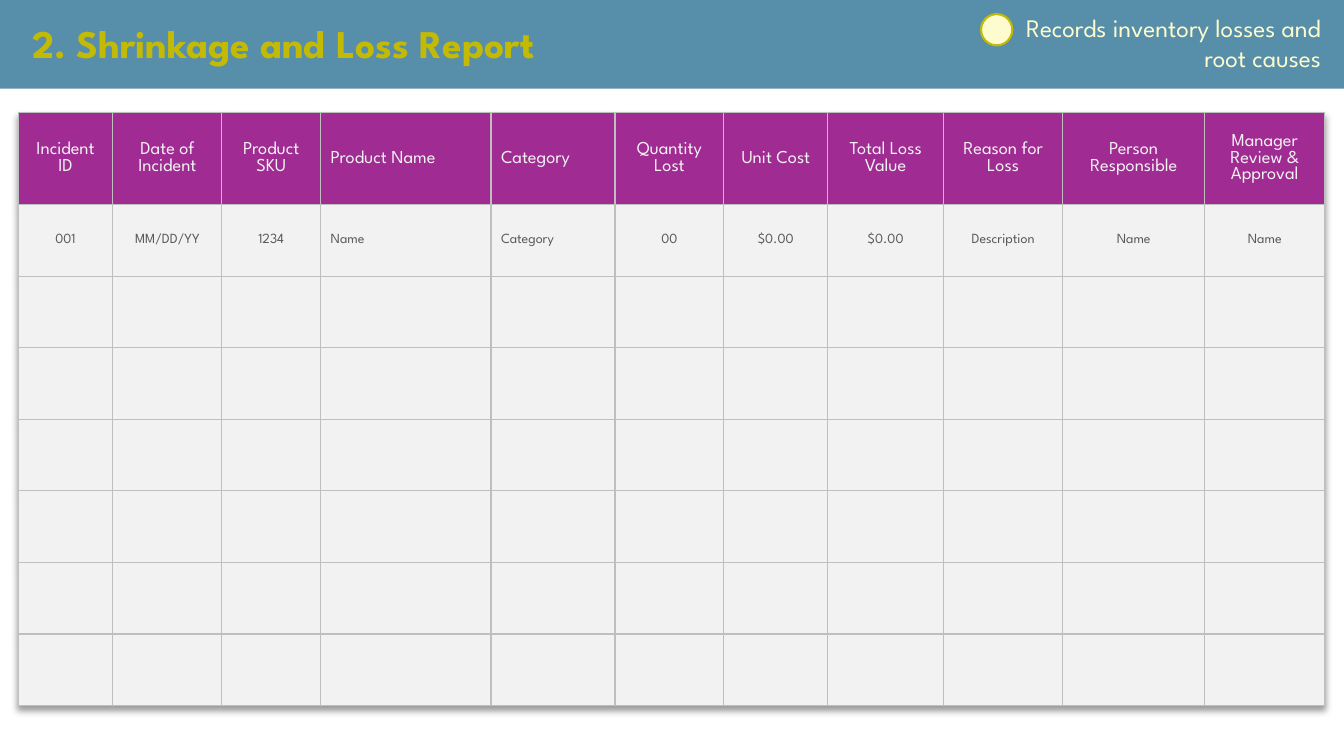
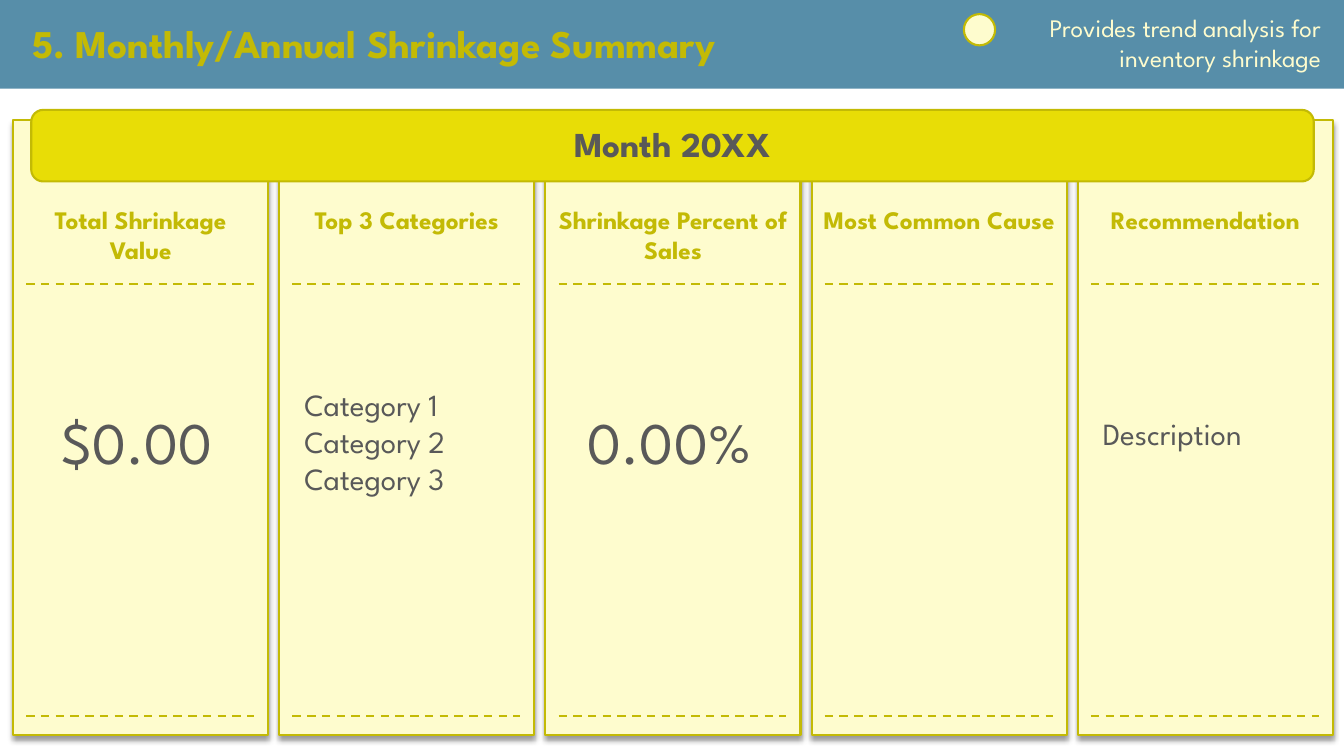
from dataclasses import dataclass

from lxml import etree
from pptx import Presentation
from pptx.dml.color import RGBColor
from pptx.enum.dml import MSO_LINE
from pptx.enum.shapes import MSO_CONNECTOR, MSO_SHAPE
from pptx.enum.text import MSO_ANCHOR, MSO_AUTO_SIZE, PP_ALIGN
from pptx.oxml.ns import qn
from pptx.util import Inches, Pt

RECTANGLE, OVAL = MSO_SHAPE.RECTANGLE, MSO_SHAPE.OVAL
ROUNDED = MSO_SHAPE.ROUNDED_RECTANGLE
STRAIGHT, DASH = MSO_CONNECTOR.STRAIGHT, MSO_LINE.DASH
LEFT, CENTER, RIGHT = PP_ALIGN.LEFT, PP_ALIGN.CENTER, PP_ALIGN.RIGHT
MIDDLE, GROW = MSO_ANCHOR.MIDDLE, MSO_AUTO_SIZE.SHAPE_TO_FIT_TEXT


@dataclass(frozen=True)
class Theme:
    font: str = "League Spartan"
    band: str = "578EA9"
    olive: str = "C3BA05"
    yellow: str = "E8DD06"
    cream: str = "FEFCCE"
    purple: str = "A02B93"
    pale: str = "F2F2F2"
    grey: str = "595959"
    border: str = "BFBFBF"
    title: float = 28
    month: float = 25
    label: float = 18
    body: float = 22
    figure: float = 42
    header: float = 13
    cell: float = 10
    outline: float = 1.5


THEME = Theme()

# Content
LOSS_TITLE = "2. Shrinkage and Loss Report"
LOSS_NOTE = "Records inventory losses and root causes"
LOSS_COLUMNS = [  # heading, sample value, width, alignment
    ("Incident ID", "001", 0.94, CENTER),
    ("Date of Incident", "MM/DD/YY", 1.08, CENTER),
    ("Product SKU", "1234", 0.98, CENTER),
    ("Product Name", "Name", 1.69, LEFT),
    ("Category", "Category", 1.23, LEFT),
    ("Quantity Lost", "00", 1.08, CENTER),
    ("Unit Cost", "$0.00", 1.03, CENTER),
    ("Total Loss Value", "$0.00", 1.15, CENTER),
    ("Reason for Loss", "Description", 1.18, CENTER),
    ("Person Responsible", "Name", 1.41, CENTER),
    ("Manager Review & Approval", "Name", 1.19, CENTER),
]
BODY_ROWS = 7
HEADER_HEIGHT, ROW_HEIGHT = 0.91, 0.71

SUMMARY_TITLE = "5. Monthly/Annual Shrinkage Summary"
SUMMARY_NOTE = "Provides trend analysis for inventory shrinkage"
MONTH = "Month 20XX"
FIGURE = (THEME.figure, CENTER, 0.10, 3.98, 0.81)
SUMMARY_CARDS = [  # heading, lines, (size, alignment, inset, top, height)
    ("Total Shrinkage Value", ["$0.00"], FIGURE),
    ("Top 3 Categories", ["Category 1", "Category 2", "Category 3"],
     (THEME.body, LEFT, 0.15, 3.78, 1.21)),
    ("Shrinkage Percent of Sales", ["0.00%"], FIGURE),
    ("Most Common Cause", [], None),
    ("Recommendation", ["Description"], (THEME.body, LEFT, 0.15, 4.07, 0.47)),
]
CARD_LEFT, CARD_TOP, CARD_WIDTH, CARD_HEIGHT = 0.13, 1.19, 2.53, 6.1
CARD_PITCH = 2.64
RULE_INSET, RULE_WIDTH, RULE_TOPS = 0.13, 2.26, (2.82, 7.1)
VALUE_WIDTH = 2.26


def rgb(color):
    return RGBColor.from_string(color)


def style_text(frame, size, color, align, bold=False):
    for paragraph in frame.paragraphs:
        paragraph.alignment = align
        for run in paragraph.runs:
            run.font.name = THEME.font
            run.font.size = Pt(size)
            run.font.bold = bold
            run.font.color.rgb = rgb(color)


def add_text(slide, box, text, size, color, align=LEFT, bold=False):
    shape = slide.shapes.add_textbox(*map(Inches, box))
    frame = shape.text_frame
    frame.word_wrap = True
    frame.auto_size = GROW
    frame.text = text
    style_text(frame, size, color, align, bold)


def add_soft_shadow(effects):
    shadow = etree.SubElement(
        effects, qn("a:outerShdw"), blurRad=str(Pt(4)), dist=str(Pt(3)),
        dir="5400000", algn="t", rotWithShape="0")
    color = etree.SubElement(shadow, qn("a:prstClr"), val="black")
    etree.SubElement(color, qn("a:alpha"), val="40000")


def add_box(slide, kind, box, fill, line=None, shadow=False):
    shape = slide.shapes.add_shape(kind, *map(Inches, box))
    shape.shadow.inherit = False
    shape.fill.solid()
    shape.fill.fore_color.rgb = rgb(fill)
    if line:
        shape.line.color.rgb = rgb(line)
        shape.line.width = Pt(THEME.outline)
    else:
        shape.line.fill.background()
    if shadow:
        add_soft_shadow(shape.element.spPr.find(qn("a:effectLst")))
    return shape


def add_dashed_rule(slide, left, top):
    rule = slide.shapes.add_connector(
        STRAIGHT, Inches(left), Inches(top), Inches(left + RULE_WIDTH), Inches(top))
    rule.line.color.rgb = rgb(THEME.olive)
    rule.line.width = Pt(THEME.outline)
    rule.line.dash_style = DASH
    etree.SubElement(rule.element.spPr, qn("a:effectLst"))


def add_heading(slide, title, note, dot_left):
    add_box(slide, RECTANGLE, (0, 0, 13.33, 0.88), THEME.band)
    add_text(slide, (0.22, 0.14, 8.08, 0.57), title, THEME.title, THEME.olive, bold=True)
    add_text(slide, (9.81, 0.07, 3.39, 0.71), note, THEME.label, THEME.cream, RIGHT)
    add_box(slide, OVAL, (dot_left, 0.14, 0.31, 0.31), THEME.cream, THEME.olive)


def set_borders(cell):
    properties = cell._tc.get_or_add_tcPr()
    for index, side in enumerate(("a:lnL", "a:lnR", "a:lnT", "a:lnB")):
        line = etree.Element(qn(side), w=str(Pt(1)))
        fill = etree.SubElement(line, qn("a:solidFill"))
        etree.SubElement(fill, qn("a:srgbClr"), val=THEME.border)
        properties.insert(index, line)


def build_loss_report(slide):
    add_heading(slide, LOSS_TITLE, LOSS_NOTE, 9.73)
    width = sum(column[2] for column in LOSS_COLUMNS)
    height = HEADER_HEIGHT + BODY_ROWS * ROW_HEIGHT
    box = (0.18, 1.12, width, height)
    table = slide.shapes.add_table(
        BODY_ROWS + 1, len(LOSS_COLUMNS), *map(Inches, box)).table
    effects = etree.Element(qn("a:effectLst"))
    table._tbl.tblPr.insert(0, effects)
    add_soft_shadow(effects)

    for row_index, row in enumerate(table.rows):
        is_header = row_index == 0
        row.height = Inches(HEADER_HEIGHT if is_header else ROW_HEIGHT)
        fill = THEME.purple if is_header else THEME.pale
        size = THEME.header if is_header else THEME.cell
        color = THEME.pale if is_header else THEME.grey
        for cell, column in zip(row.cells, LOSS_COLUMNS):
            cell.fill.solid()
            cell.fill.fore_color.rgb = rgb(fill)
            set_borders(cell)
            cell.vertical_anchor = MIDDLE
            if row_index < 2:
                cell.text_frame.text = column[row_index]
                style_text(cell.text_frame, size, color, column[3])
    for table_column, column in zip(table.columns, LOSS_COLUMNS):
        table_column.width = Inches(column[2])


def build_summary(slide):
    add_heading(slide, SUMMARY_TITLE, SUMMARY_NOTE, 9.56)

    # Cards
    for index, (heading, lines, layout) in enumerate(SUMMARY_CARDS):
        left = CARD_LEFT + index * CARD_PITCH
        add_box(slide, RECTANGLE, (left, CARD_TOP, CARD_WIDTH, CARD_HEIGHT),
                THEME.cream, THEME.olive, shadow=True)
        add_text(slide, (left, 1.98, CARD_WIDTH, 0.71), heading,
                 THEME.label, THEME.olive, CENTER, bold=True)
        if lines:
            size, align, inset, top, height = layout
            add_text(slide, (left + inset, top, VALUE_WIDTH, height),
                     "\n".join(lines), size, THEME.grey, align)
        for top in RULE_TOPS:
            add_dashed_rule(slide, left + RULE_INSET, top)

    # Month banner
    add_box(slide, ROUNDED, (0.31, 1.09, 12.72, 0.71), THEME.yellow, THEME.olive)
    add_text(slide, (0.31, 1.17, 12.72, 0.52), MONTH,
             THEME.month, THEME.grey, CENTER, bold=True)


def main():
    presentation = Presentation()
    presentation.slide_width, presentation.slide_height = Inches(13.33), Inches(7.5)
    blank = presentation.slide_layouts[6]
    for build in (build_loss_report, build_summary):
        build(presentation.slides.add_slide(blank))
    presentation.save("out.pptx")


if __name__ == "__main__":
    main()
